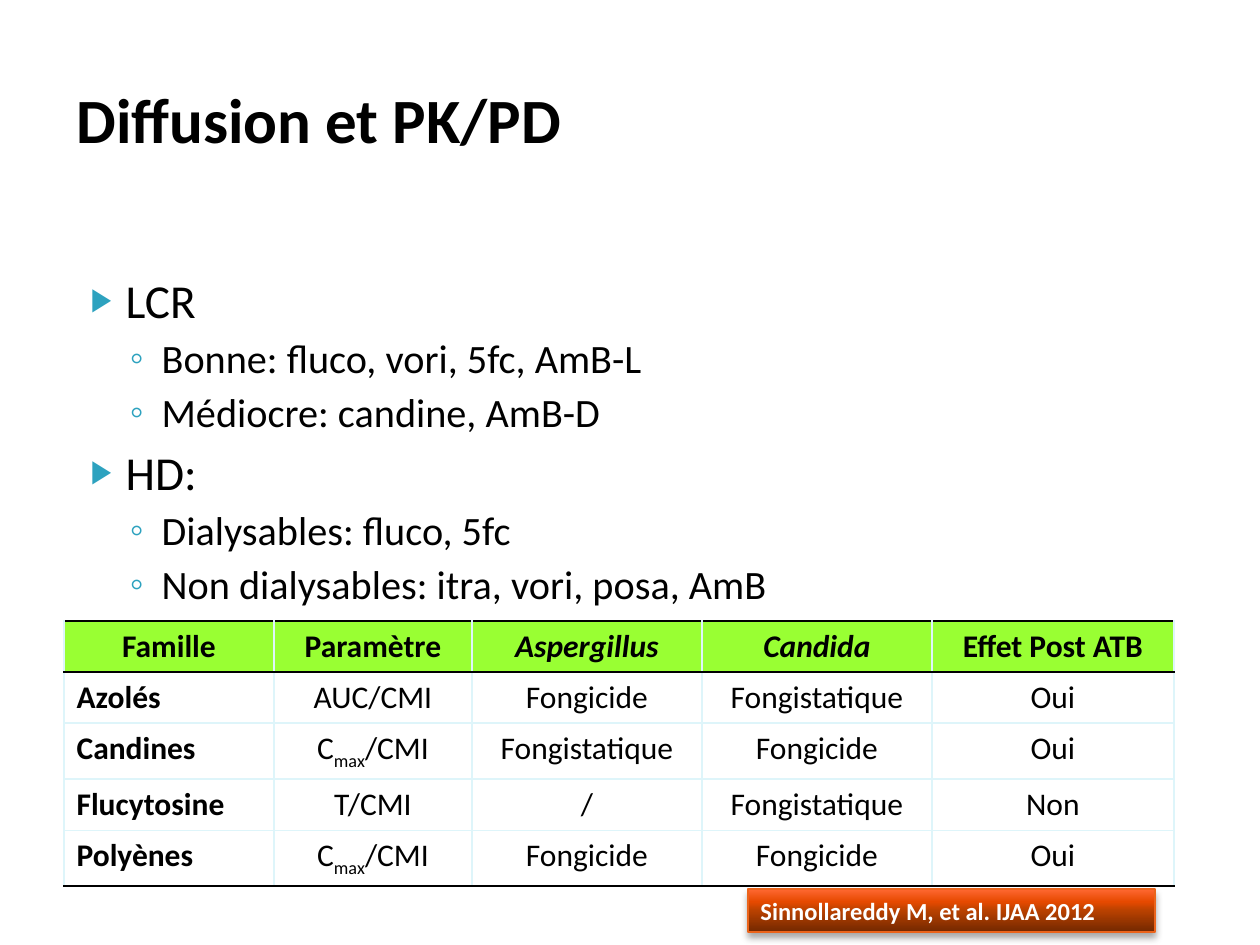
import pptx
import pptx.dml.color
import pptx.enum.shapes
import pptx.enum.text
import pptx.oxml
import pptx.util

RGB = pptx.dml.color.RGBColor
Pt = pptx.util.Pt
ALIGN = pptx.enum.text.PP_ALIGN
MIDDLE = pptx.enum.text.MSO_ANCHOR.MIDDLE
NS = 'xmlns:a="http://schemas.openxmlformats.org/drawingml/2006/main"'

BLACK = RGB(0x00, 0x00, 0x00)
WHITE = RGB(0xFF, 0xFF, 0xFF)
TEAL = RGB(0x2D, 0xA2, 0xBF)
LIME = RGB(0x99, 0xFF, 0x33)
PALE = RGB(0xDE, 0xF5, 0xFA)
RUST = RGB(0xEB, 0x64, 0x1B)
GLOW = [
    (0, RGB(0x73, 0x28, 0x00)),
    (50, RGB(0xB9, 0x41, 0x00)),
    (70, RGB(0xE6, 0x49, 0x00)),
    (100, RGB(0xFF, 0x69, 0x33)),
]

ITEMS = [
    (0, "LCR"),
    (1, "Bonne: fluco, vori, 5fc, AmB-L"),
    (1, "Médiocre: candine, AmB-D"),
    (0, "HD:"),
    (1, "Dialysables: fluco, 5fc"),
    (1, "Non dialysables: itra, vori, posa, AmB"),
]
LEVELS = [
    dict(size=27, gap=4, left=50, hang=-35, mark="▶", scale=68),
    dict(size=23, gap=3.2, left=86, hang=-32, mark="◦", scale=100),
]
ROWS = [
    ["Famille", "Paramètre", "Aspergillus", "Candida", "Effet Post ATB"],
    ["Azolés", "AUC/CMI", "Fongicide", "Fongistatique", "Oui"],
    ["Candines", "C_max_/CMI", "Fongistatique", "Fongicide", "Oui"],
    ["Flucytosine", "T/CMI", "/", "Fongistatique", "Non"],
    ["Polyènes", "C_max_/CMI", "Fongicide", "Fongicide", "Oui"],
]
WIDTHS = [210, 198, 230, 230, 242]
HEIGHTS = [51, 51, 56, 51, 56]


def px(num):
    """Turn slide pixels into EMU."""
    return pptx.util.Emu(round(num * 914400 / 126))


def place(shape, box):
    """Move a shape to a pixel box."""
    shape.left, shape.top, shape.width, shape.height = map(px, box)


def style(para, size, color=BLACK, bold=False, italic=False):
    """Set the font of a whole paragraph."""
    font = para.font
    font.name, font.size = "Calibri", Pt(size)
    font.bold, font.italic = bold, italic
    font.color.rgb = color


def add_xml(parent, xml):
    """Append a drawing element written as XML."""
    parent.append(pptx.oxml.parse_xml(xml.replace(" ", f" {NS} ", 1)))


def fill_title(shape, box):
    """Write the slide title."""
    place(shape, box)
    frame = shape.text_frame
    frame.text = "Diffusion et PK/PD"
    frame.vertical_anchor = MIDDLE
    para = frame.paragraphs[0]
    para.alignment = ALIGN.LEFT
    style(para, 36, bold=True)


def fill_list(shape, box):
    """Write the two-level list."""
    place(shape, box)
    frame = shape.text_frame
    frame.auto_size = pptx.enum.text.MSO_AUTO_SIZE.NONE
    frame.text = "\n".join(text for _, text in ITEMS)
    for para, (level, _) in zip(frame.paragraphs, ITEMS):
        look = LEVELS[level]
        para.level = level
        para.space_before = Pt(look["gap"])
        props = para._p.get_or_add_pPr()
        props.set("marL", str(px(look["left"])))
        props.set("indent", str(px(look["hang"])))
        add_xml(props, f'<a:buClr ><a:srgbClr val="{TEAL}"/></a:buClr>')
        add_xml(props, f'<a:buSzPct val="{look["scale"] * 1000}"/>')
        add_xml(props, f'<a:buChar char="{look["mark"]}"/>')
        style(para, look["size"])


def edge(cell, colors):
    """Draw the four borders of a cell."""
    props = cell._tc.get_or_add_tcPr()
    for side, color in zip("LRTB", colors):
        add_xml(props, f'<a:ln{side} w="12700"><a:solidFill><a:srgbClr val="{color}"/>'
                       f'</a:solidFill></a:ln{side}>')


def fill_cell(cell, text, row, col):
    """Write and format one table cell."""
    head = row == 0
    top = BLACK if row < 2 else PALE
    foot = BLACK if row in (0, len(ROWS) - 1) else PALE
    edge(cell, [PALE, PALE, top, foot])
    if head:
        cell.fill.solid()
        cell.fill.fore_color.rgb = LIME
    else:
        cell.fill.background()
    para = cell.text_frame.paragraphs[0]
    para.alignment = ALIGN.LEFT if col == 0 and not head else ALIGN.CENTER
    para.space_before = Pt(4)
    style(para, 18, bold=head or col == 0, italic=head and col in (2, 3))
    for num, part in enumerate(text.split("_")):
        run = para.add_run()
        run.text = part
        if num == 1:
            run._r.get_or_add_rPr().set("baseline", "-25000")


def add_grid(slide, box):
    """Add the table of drug families."""
    frame = slide.shapes.add_table(len(ROWS), len(WIDTHS), *map(px, box))
    table = frame.table
    table.first_row = table.horz_banding = False
    for col, width in zip(table.columns, WIDTHS):
        col.width = px(width)
    for row, height in zip(table.rows, HEIGHTS):
        row.height = px(height)
    for row, texts in enumerate(ROWS):
        for col, text in enumerate(texts):
            fill_cell(table.cell(row, col), text, row, col)


def add_source(slide, box):
    """Add the shaded reference label."""
    kind = pptx.enum.shapes.MSO_SHAPE.RECTANGLE
    shape = slide.shapes.add_shape(kind, *map(px, box))
    props = shape._element.spPr
    stops = "".join(f'<a:gs pos="{pos * 1000}"><a:srgbClr val="{color}"/></a:gs>'
                    for pos, color in GLOW)
    add_xml(props, f'<a:gradFill rotWithShape="1"><a:gsLst>{stops}</a:gsLst>'
                   '<a:lin ang="16200000" scaled="0"/></a:gradFill>')
    shape.line.color.rgb = RUST
    shape.line.width = Pt(0.75)
    add_xml(props, '<a:effectLst ><a:outerShdw blurRad="50800" dist="38100" dir="5400000" '
                   'rotWithShape="0"><a:srgbClr val="000000"><a:alpha val="35000"/>'
                   '</a:srgbClr></a:outerShdw></a:effectLst>')
    frame = shape.text_frame
    frame.word_wrap = True
    frame.vertical_anchor = MIDDLE
    frame.text = "Sinnollareddy M, et al. IJAA 2012"
    para = frame.paragraphs[0]
    para.alignment = ALIGN.LEFT
    style(para, 14, WHITE, bold=True)


def main():
    """Build and save the slide."""
    deck = pptx.Presentation()
    deck.slide_width, deck.slide_height = px(1260), px(945)
    slide = deck.slides.add_slide(deck.slide_layouts[1])
    fill_list(slide.placeholders[1], (63, 265, 1134, 563))
    fill_title(slide.shapes.title, (64, 35, 1134, 166))
    add_grid(slide, (64, 621, sum(WIDTHS), sum(HEIGHTS)))
    add_source(slide, (748, 889, 407, 43))
    deck.save("out.pptx")


if __name__ == "__main__":
    main()
